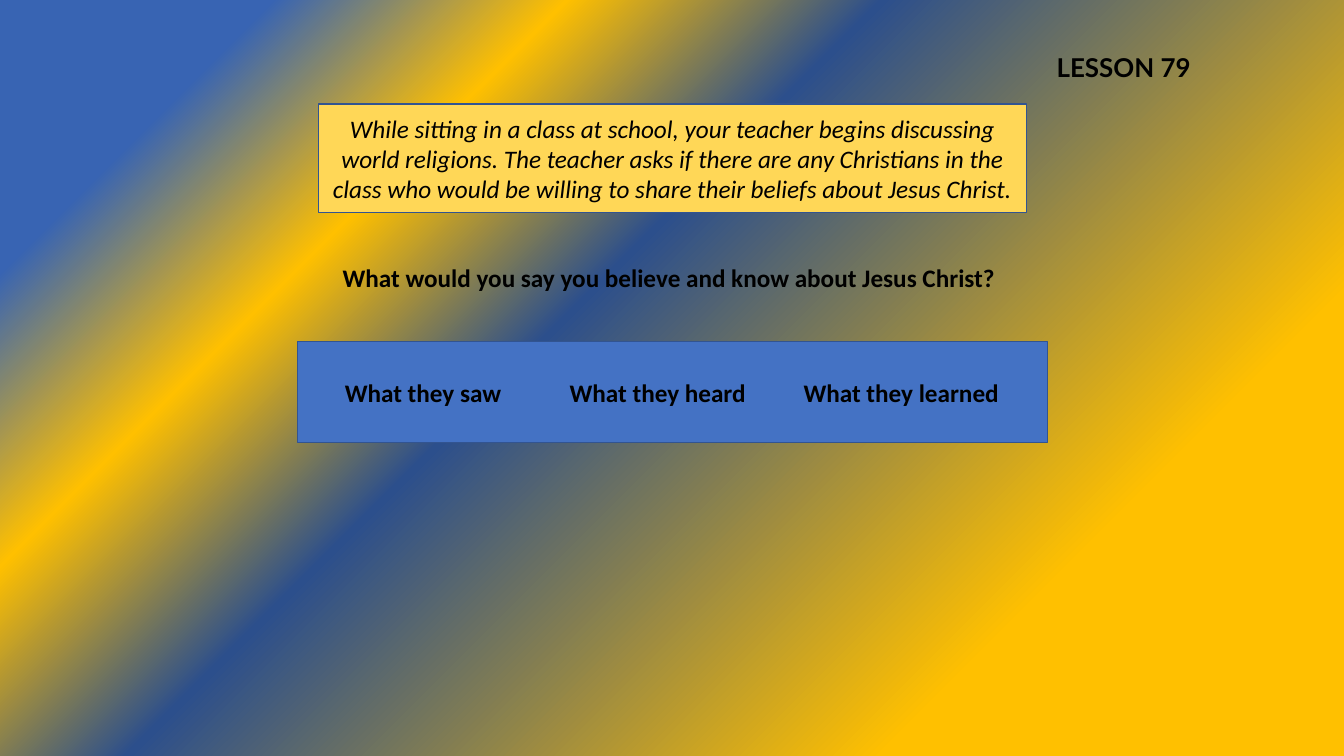
"""Build the Lesson 79 slide on sharing beliefs about Jesus Christ."""
from copy import deepcopy

from lxml.etree import SubElement
from pptx import Presentation
from pptx.dml.color import RGBColor
from pptx.enum.shapes import MSO_SHAPE
from pptx.enum.text import MSO_ANCHOR, MSO_AUTO_SIZE as AutoSize, PP_ALIGN as Align
from pptx.oxml.ns import qn
from pptx.util import Inches, Pt

COLORS = {
    "black": "000000",
    "pale_gold": "FFD757",
    "blue": "4472C4",
    "outline": "325491",
}
BACKGROUND_STOPS = [(0.13, "3864B3"), (0.27, "FFC000"), (0.42, "2C4F8C"), (0.78, "FFC000")]

LESSON = "LESSON 79"
SCENARIO = (
    "While sitting in a class at school, your teacher begins discussing world religions. "
    "The teacher asks if there are any Christians in the class who would be willing to "
    "share their beliefs about Jesus Christ."
)
QUESTION = "What would you say you believe and know about Jesus Christ?"
WITNESS_LABELS = ["What they saw", "What they heard", "What they learned"]
WITNESS_INSET = 0.47
WITNESS_TABS = [2.23, 4.55]


def write_text(shape, text, size=18, font="Calibri", bold=False, italic=False,
               align=Align.LEFT, anchor=MSO_ANCHOR.TOP, wrap=True,
               auto_size=AutoSize.NONE, before=0):
    frame = shape.text_frame
    frame.word_wrap = wrap
    frame.auto_size = auto_size
    frame.vertical_anchor = anchor
    para = frame.paragraphs[0]
    para.alignment = align
    para.space_before = Pt(before)
    span = para.add_run()
    span.text = text
    span.font.name = font
    span.font.size = Pt(size)
    span.font.bold = bold
    span.font.italic = italic
    span.font.color.rgb = RGBColor.from_string(COLORS["black"])
    return para


def add_panel(slide, left, top, width, height, fill):
    panel = slide.shapes.add_shape(MSO_SHAPE.RECTANGLE, Inches(left), Inches(top),
                                   Inches(width), Inches(height))
    panel.shadow.inherit = False
    panel.fill.solid()
    panel.fill.fore_color.rgb = RGBColor.from_string(COLORS[fill])
    panel.line.color.rgb = RGBColor.from_string(COLORS["outline"])
    panel.line.width = Pt(1)
    return panel


def paint_background(slide):
    fill = slide.background.fill
    fill.gradient()
    fill.gradient_angle = 315
    stop_list = next(slide.element.iter(qn("a:gsLst")))
    while len(stop_list) < len(BACKGROUND_STOPS):
        stop_list.append(deepcopy(stop_list[0]))
    for stop, (position, color) in zip(fill.gradient_stops, BACKGROUND_STOPS):
        stop.position = position
        stop.color.rgb = RGBColor.from_string(color)


def set_tabs(para, positions):
    tab_list = SubElement(para._p.get_or_add_pPr(), qn("a:tabLst"))
    for position in positions:
        SubElement(tab_list, qn("a:tab"), pos=str(Inches(position)), algn="l")


def main():
    deck = Presentation()
    deck.slide_width, deck.slide_height = Inches(13.33), Inches(7.5)
    slide = deck.slides.add_slide(deck.slide_layouts[5])
    paint_background(slide)

    title = slide.shapes.title
    title.left, title.top = Inches(10.38), Inches(0.46)
    title.width, title.height = Inches(1.71), Inches(0.51)
    write_text(title, LESSON, size=18.5, font="Lato", bold=True, before=10)

    scenario = add_panel(slide, 3.16, 1.03, 7.02, 1.08, "pale_gold")
    write_text(scenario, SCENARIO, italic=True, align=Align.CENTER, anchor=MSO_ANCHOR.MIDDLE)

    question = slide.shapes.add_textbox(Inches(3.3), Inches(2.55), Inches(6.73), Inches(0.4))
    write_text(question, QUESTION, bold=True, wrap=False, auto_size=AutoSize.SHAPE_TO_FIT_TEXT)

    witness = add_panel(slide, 2.95, 3.39, 7.44, 1, "blue")
    witness.text_frame.margin_left = Inches(WITNESS_INSET)
    labels = write_text(witness, "\t".join(WITNESS_LABELS), bold=True, anchor=MSO_ANCHOR.MIDDLE)
    set_tabs(labels, WITNESS_TABS)

    deck.save("out.pptx")


if __name__ == "__main__":
    main()
